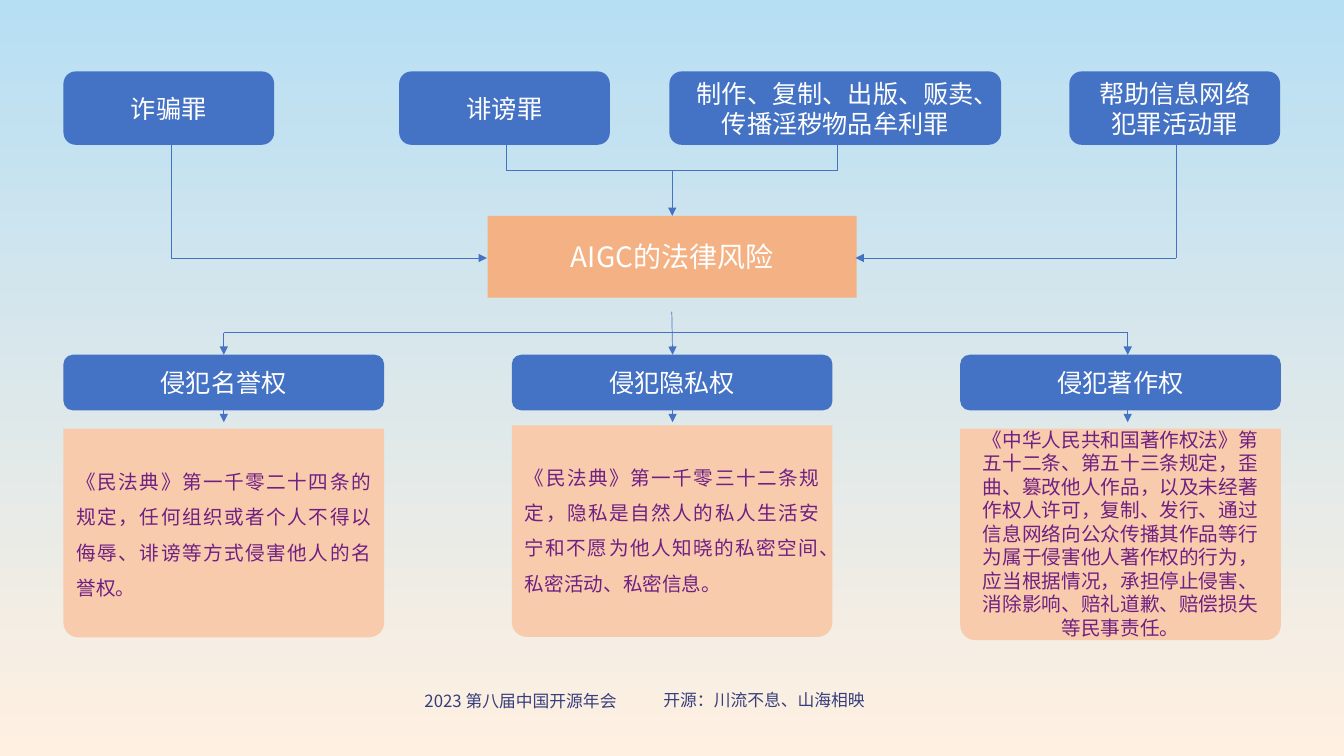
from typing import NamedTuple

from pptx import Presentation
from pptx.dml.color import RGBColor
from pptx.enum.shapes import MSO_CONNECTOR as Link, MSO_SHAPE as Kind
from pptx.enum.text import MSO_ANCHOR as Anchor, MSO_AUTO_SIZE as Fit, PP_ALIGN as Align
from pptx.oxml.xmlchemy import OxmlElement as Node
from pptx.util import Cm, Pt

BLUE = RGBColor(0x44, 0x72, 0xC4)
ORANGE = RGBColor(0xF4, 0xB1, 0x83)
PEACH = RGBColor(0xF8, 0xCB, 0xAD)
PURPLE = RGBColor(0x70, 0x20, 0x82)
NAVY = RGBColor(0x36, 0x3E, 0x7D)
WHITE = RGBColor(0xFF, 0xFF, 0xFF)
SKY = RGBColor(0xB7, 0xDF, 0xF4)
CREAM = RGBColor(0xFF, 0xF0, 0xE1)
FONT = "Noto Sans CJK SC"


class Box(NamedTuple):
    """Left, top, width and height in centimetres."""
    x: float
    y: float
    w: float
    h: float

    def size(self) -> list:
        return [Cm(v) for v in self]


class Crime(NamedTuple):
    text: str
    x: float
    w: float = 5.31


class Right(NamedTuple):
    head: str
    text: str
    mid: float
    panel: Box
    body: Box
    align: Align = Align.JUSTIFY
    space: float = 1.5


class Line(NamedTuple):
    x1: float
    y1: float
    x2: float
    y2: float
    arrow: bool = False


CRIMES = [
    Crime("诈骗罪", 1.6),
    Crime("诽谤罪", 10.06),
    Crime("制作、复制、出版、贩卖、传播淫秽物品牟利罪", 16.87, 8.36),
    Crime("帮助信息网络犯罪活动罪", 26.95),
]
LEFT, STEP, WIDE = 1.6, 11.3, 8.08
COLS = [LEFT + STEP * i for i in range(3)]
RIGHTS = [
    Right("侵犯名誉权",
          "《民法典》第一千零二十四条的规定，任何组织或者个人不得以侮辱、诽谤等方式侵害他人的名誉权。",
          5.64, Box(COLS[0], 10.8, WIDE, 5.26), Box(COLS[0] + 0.33, 12.04, 7.42, 2.57)),
    Right("侵犯隐私权",
          "《民法典》第一千零三十二条规定，隐私是自然人的私人生活安宁和不愿为他人知晓的私密空间、"
          "私密活动、私密信息。",
          16.95, Box(COLS[1], 10.72, WIDE, 5.33), Box(COLS[1] + 0.33, 11.48, 7.42, 3.48)),
    Right("侵犯著作权",
          "《中华人民共和国著作权法》第五十二条、第五十三条规定，歪曲、篡改他人作品，以及未经著作权人许可，"
          "复制、发行、通过信息网络向公众传播其作品等行为属于侵害他人著作权的行为，应当根据情况，"
          "承担停止侵害、消除影响、赔礼道歉、赔偿损失等民事责任。",
          28.42, Box(COLS[2], 10.8, WIDE, 5.33), Box(COLS[2] + 0.33, 11.05, 7.42, 4.78),
          Align.CENTER, 1.0),
]
TITLE = Box(12.29, 5.44, 9.3, 2.06)
LINES = [
    # Outer crimes to the title
    Line(4.32, 3.66, 4.32, 6.5),
    Line(4.32, 6.5, 12.27, 6.5, True),
    Line(29.64, 3.66, 29.64, 6.5),
    Line(29.64, 6.5, 21.56, 6.5, True),
    # Inner crimes to the title
    Line(12.75, 3.56, 12.75, 4.29),
    Line(21.11, 3.56, 21.11, 4.29),
    Line(12.75, 4.29, 21.11, 4.29),
    Line(16.94, 4.29, 16.94, 5.44, True),
    # Title to the rights
    Line(16.93, 7.85, 16.95, 8.94, True),
    Line(5.64, 8.38, 28.42, 8.38),
    Line(5.64, 8.38, 5.64, 8.94, True),
    Line(28.42, 8.38, 28.42, 8.94, True),
]
FOOTS = [
    ("2023 第八届中国开源年会", Box(9.63, 17.27, 6.98, 0.76)),
    ("开源：川流不息、山海相映", Box(16.2, 17.25, 6.12, 0.76)),
]


def write(shape, text: str, *, size: float = 18, color: RGBColor = WHITE,
          align: Align = Align.CENTER, space: float = 1.0, pad: float = 0.5,
          anchor: Anchor = Anchor.MIDDLE, fit: Fit = Fit.NONE) -> None:
    frame = shape.text_frame
    frame.word_wrap = True
    frame.auto_size = fit
    frame.vertical_anchor = anchor
    frame.margin_left = frame.margin_right = Cm(pad)
    frame.margin_top = frame.margin_bottom = Cm(pad)
    para = frame.paragraphs[0]
    para.alignment = align
    para.line_spacing = space
    run = para.add_run()
    run.text = text
    run.font.size = Pt(size)
    run.font.name = FONT
    run.font.color.rgb = color
    ea = Node("a:ea")
    ea.set("typeface", FONT)
    run.font._element.find("{*}latin").addnext(ea)


def paint(shape, color: RGBColor) -> None:
    shape.fill.solid()
    shape.fill.fore_color.rgb = color
    shape.line.fill.background()
    shape.shadow.inherit = False


def block(slide, kind: Kind, box: Box, color: RGBColor):
    shape = slide.shapes.add_shape(kind, *box.size())
    paint(shape, color)
    return shape


def head(slide, text: str, box: Box) -> None:
    shape = slide.shapes.title
    shape.left, shape.top, shape.width, shape.height = box.size()
    geom = Node("a:prstGeom")
    geom.set("prst", "roundRect")
    geom.append(Node("a:avLst"))
    shape._element.spPr.append(geom)
    paint(shape, ORANGE)
    write(shape, text, size=20)


def join(slide, line: Line) -> None:
    ends = [Cm(v) for v in line[:4]]
    link = slide.shapes.add_connector(Link.STRAIGHT, *ends)
    link.line.color.rgb = BLUE
    link.line.width = Pt(0.5)
    if line.arrow:
        tip = Node("a:tailEnd")
        tip.set("type", "triangle")
        link.line._get_or_add_ln().append(tip)
    link._element.spPr.append(Node("a:effectLst"))


def column(slide, right: Right) -> None:
    top = block(slide, Kind.ROUNDED_RECTANGLE, Box(right.panel.x, 8.94, WIDE, 1.4), BLUE)
    write(top, right.head)
    panel = block(slide, Kind.ROUND_2_SAME_RECTANGLE, right.panel, PEACH)
    panel.adjustments[0], panel.adjustments[1] = 0, 0.07
    body = slide.shapes.add_textbox(*right.body.size())
    write(body, right.text, size=14, color=PURPLE, align=right.align,
          space=right.space, pad=0, fit=Fit.SHAPE_TO_FIT_TEXT)
    join(slide, Line(right.mid, 10.34, right.mid, 10.64, True))


def main() -> None:
    deck = Presentation()
    deck.slide_width, deck.slide_height = Cm(33.87), Cm(19.05)
    slide = deck.slides.add_slide(deck.slide_layouts[5])

    # Background
    fill = slide.background.fill
    fill.gradient()
    fill.gradient_angle = 270
    for stop, color, place in zip(fill.gradient_stops, (SKY, CREAM), (0, 1)):
        stop.color.rgb = color
        stop.position = place

    # Title and crimes
    head(slide, "AIGC的法律风险", TITLE)
    for crime in CRIMES:
        box = Box(crime.x, 1.8, crime.w, 1.85)
        write(block(slide, Kind.ROUNDED_RECTANGLE, box, BLUE), crime.text)

    # Rights and links
    for right in RIGHTS:
        column(slide, right)
    for line in LINES:
        join(slide, line)

    # Footer
    for text, box in FOOTS:
        foot = slide.shapes.add_textbox(*box.size())
        write(foot, text, size=12, color=NAVY, pad=0.13, anchor=Anchor.TOP,
              fit=Fit.SHAPE_TO_FIT_TEXT)

    deck.save("out.pptx")


if __name__ == "__main__":
    main()
